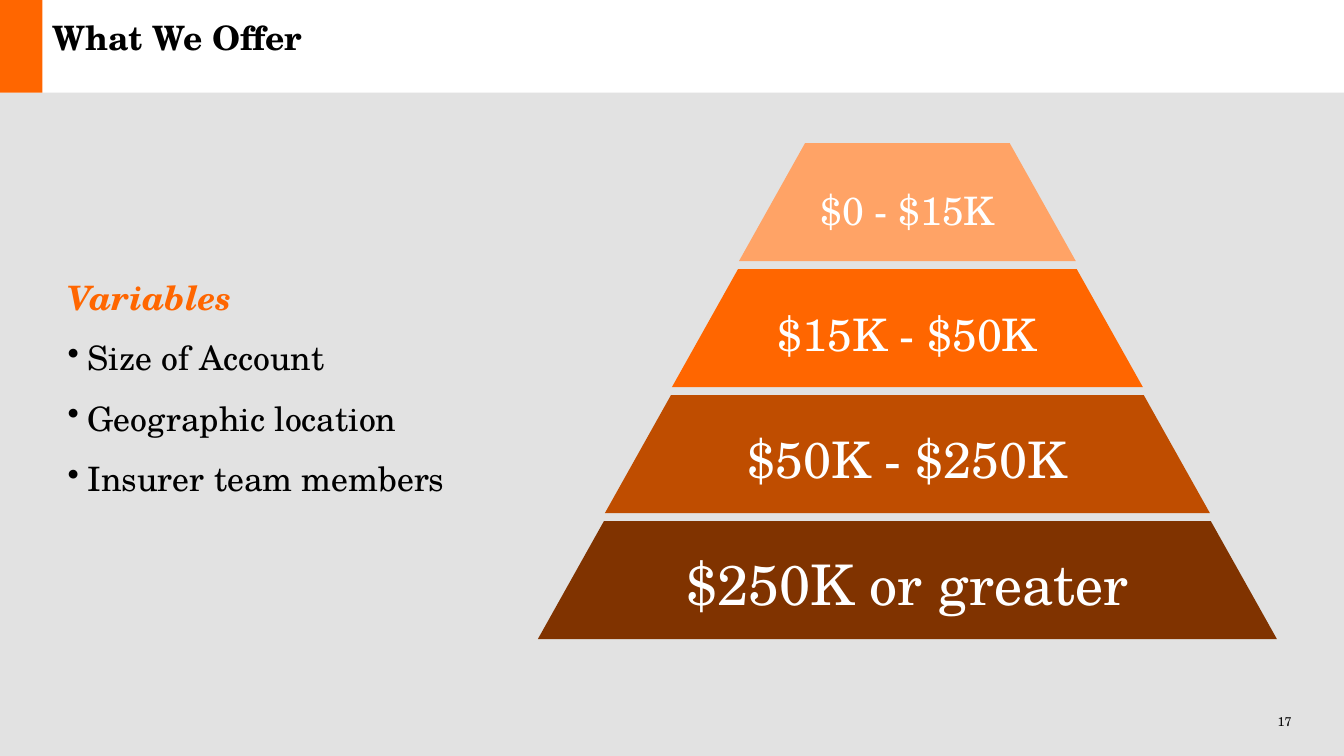
import pptx
import pptx.util
import pptx.dml.color
import pptx.enum.shapes
import pptx.enum.text
import pptx.oxml
import pptx.oxml.ns
from dataclasses import dataclass

Inches = pptx.util.Inches
Pt = pptx.util.Pt
Kind = pptx.enum.shapes.MSO_SHAPE
Align = pptx.enum.text.PP_ALIGN
Anchor = pptx.enum.text.MSO_ANCHOR


@dataclass(frozen=True)
class Theme:
    face: str = "TeX Gyre Schola"
    ink: str = "000000"
    white: str = "FFFFFF"
    panel: str = "E2E2E2"
    accent: str = "FF6600"
    tiers: tuple = ("803300", "BF4D00", "FF6600", "FFA366")
    sizes: tuple = (40, 36, 32, 28)
    head: int = 24
    small: int = 9


def color(code):
    return pptx.dml.color.RGBColor.from_string(code)


def write(para, text, face, size, ink, bold=False, italic=False,
          align=Align.LEFT, space=None, bullet=None):
    para.alignment = align
    if space is not None:
        para.line_spacing = space
    if bullet:
        props = para._p.get_or_add_pPr()
        props.set("marL", str(Inches(0.2)))
        props.set("indent", str(-Inches(0.2)))
        mark = pptx.oxml.parse_xml(
            f'<a:buChar {pptx.oxml.ns.nsdecls("a")} char="{bullet}"/>')
        props.append(mark)
    run = para.add_run()
    run.text = text
    font = run.font
    font.name = face
    font.size = Pt(size)
    font.bold = bold
    font.italic = italic
    font.color.rgb = color(ink)


class Deck:
    def __init__(self, theme):
        self.theme = theme
        self.file = pptx.Presentation()
        self.file.slide_width = Inches(13.33)
        self.file.slide_height = Inches(7.5)
        self.slide = self.file.slides.add_slide(self.file.slide_layouts[6])

    def shape(self, kind, left, top, width, height, fill):
        item = self.slide.shapes.add_shape(
            kind, Inches(left), Inches(top), Inches(width), Inches(height))
        item.shadow.inherit = False
        item.fill.solid()
        item.fill.fore_color.rgb = color(fill)
        item.line.fill.background()
        return item

    def text(self, left, top, width, height, lines, anchor=Anchor.TOP):
        box = self.slide.shapes.add_textbox(
            Inches(left), Inches(top), Inches(width), Inches(height))
        frame = box.text_frame
        frame.word_wrap = True
        frame.vertical_anchor = anchor
        frame.margin_left = frame.margin_right = Inches(0)
        frame.margin_top = frame.margin_bottom = Inches(0)
        for index, (words, style) in enumerate(lines):
            para = frame.add_paragraph() if index else frame.paragraphs[0]
            write(para, words, self.theme.face, **style)

    def tier(self, middle, top, width, height, slope, fill, label, size):
        item = self.shape(Kind.TRAPEZOID, middle - width / 2, top,
                          width, height, fill)
        item.adjustments[0] = slope
        frame = item.text_frame
        frame.word_wrap = True
        frame.vertical_anchor = Anchor.MIDDLE
        write(frame.paragraphs[0], label, self.theme.face, size,
              self.theme.white, align=Align.CENTER)

    def save(self):
        self.file.save("out.pptx")


def main():
    theme = Theme()
    deck = Deck(theme)
    deck.shape(Kind.RECTANGLE, 0, 0.92, 13.33, 6.58, theme.panel)
    deck.text(0.52, 0.25, 12.29, 1.14, [
        ("What We Offer", dict(size=theme.head, ink=theme.ink, bold=True,
                               space=Pt(23)))])
    deck.text(12.1, 7.06, 0.71, 0.2, [
        ("17", dict(size=theme.small, ink=theme.ink, align=Align.RIGHT))],
        Anchor.MIDDLE)
    deck.shape(Kind.RECTANGLE, 0, 0, 0.42, 0.92, theme.accent)

    lead = dict(size=theme.head, ink=theme.accent, bold=True, italic=True,
                space=1.5)
    point = dict(size=theme.head, ink=theme.ink, space=1.5, bullet="•")
    points = ("Size of Account", "Geographic location", "Insurer team members")
    deck.text(0.67, 1.08, 5, 5.33,
              [("Variables", lead)] + [(words, point) for words in points],
              Anchor.MIDDLE)

    labels = ("$250K or greater", "$50K - $250K", "$15K - $50K", "$0 - $15K")
    for step, (label, fill, size) in enumerate(
            zip(labels, theme.tiers, theme.sizes)):
        deck.tier(9, 5.17 - 1.25 * step, 7.33 - 1.33 * step, 1.17, 0.56,
                  fill, label, size)
    deck.save()


if __name__ == "__main__":
    main()
